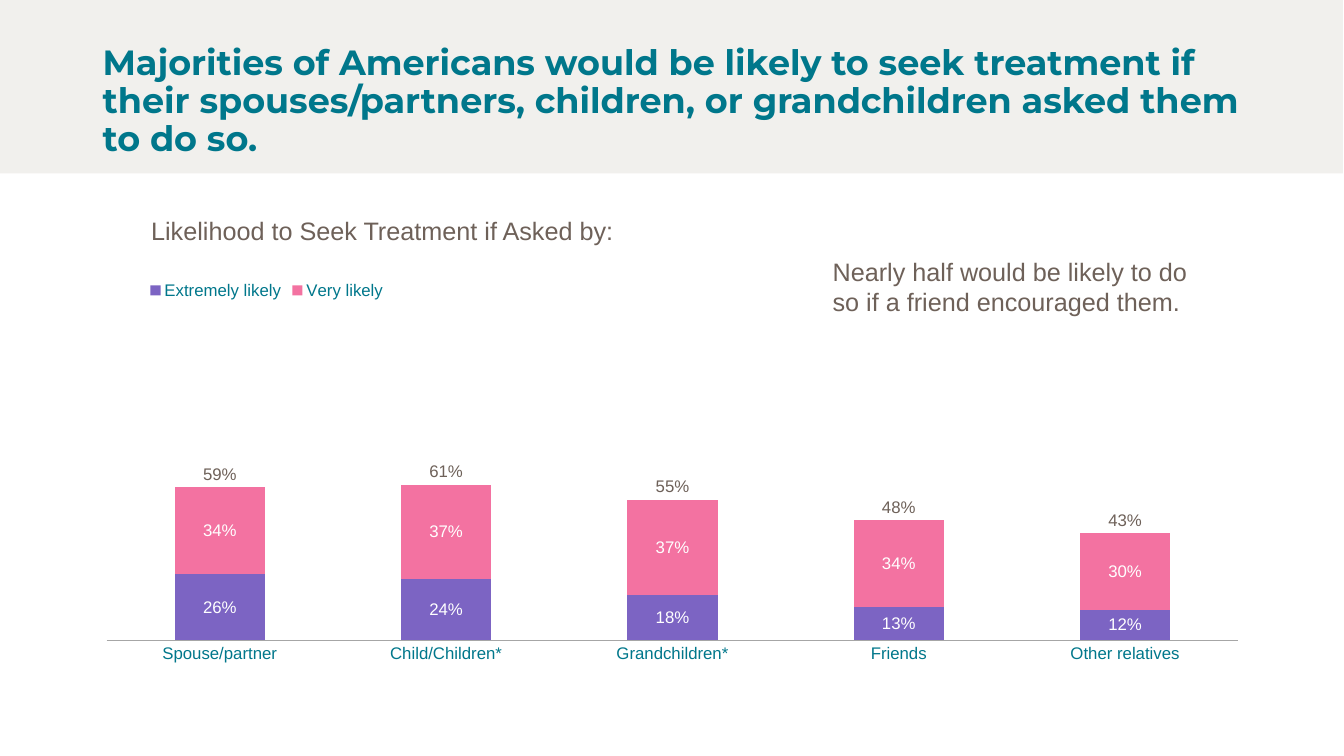
from dataclasses import dataclass

from lxml import etree
from pptx import Presentation
from pptx.chart.data import CategoryChartData
from pptx.dml.color import RGBColor
from pptx.enum.chart import XL_CHART_TYPE as ChartType
from pptx.enum.chart import XL_LABEL_POSITION as LabelPosition
from pptx.enum.chart import XL_LEGEND_POSITION as LegendPosition
from pptx.enum.chart import XL_TICK_MARK as TickMark
from pptx.enum.shapes import MSO_SHAPE as Shape
from pptx.oxml.ns import qn
from pptx.util import Inches, Pt


@dataclass(frozen=True)
class Theme:
    teal: str = "00778B"
    brown: str = "6E6159"
    band: str = "F1F0ED"
    purple: str = "7C64C3"
    pink: str = "F372A1"
    violet: str = "AE61C4"
    coral: str = "FF6352"
    turquoise: str = "00B7B4"
    white: str = "FFFFFF"
    axis: str = "A6A6A6"
    heading_font: str = "Montserrat"
    body_font: str = "Arial"
    title_size: int = 25
    note_size: int = 18
    chart_size: int = 12


THEME = Theme()
GROUPS = ["Spouse/partner", "Child/Children*", "Grandchildren*", "Friends", "Other relatives"]
UNUSED = [None] * len(GROUPS)
SHOWN_IN_LEGEND = 2
ANSWERS = [
    ("Extremely likely", [0.26, 0.24, 0.18, 0.13, 0.12], THEME.purple, THEME.white),
    ("Very likely", [0.34, 0.37, 0.37, 0.34, 0.3], THEME.pink, THEME.white),
    ("Series 3", [0.59, 0.61, 0.55, 0.48, 0.43], None, THEME.brown),
    ("Series 4", UNUSED, THEME.violet, THEME.white),
    ("Series 5", UNUSED, THEME.coral, THEME.white),
    ("Series 6", UNUSED, THEME.turquoise, THEME.white),
]


def rgb(value):
    return RGBColor.from_string(value)


def set_font(font, size, color, face=THEME.body_font, bold=False):
    font.name = face
    font.size = Pt(size)
    font.bold = bold
    font.color.rgb = rgb(color)


def add_text(slide, text, box, size=THEME.note_size, color=THEME.brown,
             face=THEME.body_font, bold=False, line_spacing=None):
    frame = slide.shapes.add_textbox(*map(Inches, box)).text_frame
    frame.word_wrap = True
    paragraph = frame.paragraphs[0]
    paragraph.line_spacing = line_spacing
    run = paragraph.add_run()
    run.text = text
    set_font(run.font, size, color, face, bold)


def add_band(slide, box):
    band = slide.shapes.add_shape(Shape.RECTANGLE, *map(Inches, box))
    band.shadow.inherit = False
    band.fill.solid()
    band.fill.fore_color.rgb = rgb(THEME.band)
    band.line.fill.background()


def place(parent, index, **settings):
    for old in parent.findall(qn("c:layout")):
        parent.remove(old)
    layout = etree.Element(qn("c:layout"))
    manual = etree.SubElement(layout, qn("c:manualLayout"))
    for tag, value in settings.items():
        etree.SubElement(manual, qn(f"c:{tag}")).set("val", str(value))
    parent.insert(index, layout)


def hide_legend_entry(legend_xml, series_index):
    entry = etree.Element(qn("c:legendEntry"))
    etree.SubElement(entry, qn("c:idx")).set("val", str(series_index))
    etree.SubElement(entry, qn("c:delete")).set("val", "1")
    legend_xml.insert(1, entry)


def style_series(series, fill, label_color):
    labels = series.data_labels
    labels.show_value = True
    labels.number_format = "0%"
    labels.number_format_is_linked = False
    set_font(labels.font, THEME.chart_size, label_color)
    if fill:
        series.format.fill.solid()
        series.format.fill.fore_color.rgb = rgb(fill)
        labels.position = LabelPosition.CENTER
    else:
        series.format.fill.background()
        labels.position = LabelPosition.INSIDE_BASE


def style_axes(chart):
    groups, shares = chart.category_axis, chart.value_axis
    groups.major_tick_mark = groups.minor_tick_mark = TickMark.NONE
    groups.has_major_gridlines = False
    groups.format.line.color.rgb = rgb(THEME.axis)
    shares.minimum_scale, shares.maximum_scale = 0, 1.4
    shares.has_major_gridlines = False
    shares.visible = False


def add_likelihood_chart(slide, box):
    data = CategoryChartData(number_format="0%")
    data.categories = GROUPS
    for name, shares, _, _ in ANSWERS:
        data.add_series(name, shares)
    chart = slide.shapes.add_chart(ChartType.COLUMN_STACKED, *map(Inches, box), data).chart
    chart.has_title = False
    set_font(chart.font, THEME.chart_size, THEME.teal)

    columns = chart.plots[0]
    columns.vary_by_categories = False
    columns.gap_width, columns.overlap = 150, 100
    for series, (_, _, fill, label_color) in zip(columns.series, ANSWERS):
        style_series(series, fill, label_color)
    style_axes(chart)

    chart.has_legend = True
    legend = chart.legend
    legend.position = LegendPosition.TOP
    legend.include_in_layout = False
    set_font(legend.font, THEME.chart_size, THEME.teal)
    legend_xml = chart.element.find(f".//{qn('c:legend')}")
    place(legend_xml, 1, xMode="edge", yMode="edge", x=0.045, y=0.158)
    for hidden in reversed(range(SHOWN_IN_LEGEND, len(ANSWERS))):
        hide_legend_entry(legend_xml, hidden)
    place(chart.element.find(f".//{qn('c:plotArea')}"), 0, layoutTarget="inner",
          xMode="edge", yMode="edge", x=0.012, y=0.17, w=0.976, h=0.745)


def main():
    deck = Presentation()
    deck.slide_width, deck.slide_height = Inches(13.33), Inches(7.5)
    slide = deck.slides.add_slide(deck.slide_layouts[6])
    add_band(slide, (-0.01, 0, 13.33, 1.72))
    add_text(slide, "Majorities of Americans would be likely to seek treatment if their "
             "spouses/partners, children, or grandchildren asked them to do so.",
             (0.92, 0.4, 11.5, 1.45), size=THEME.title_size, color=THEME.teal,
             face=THEME.heading_font, bold=True, line_spacing=0.9)
    add_likelihood_chart(slide, (0.92, 2, 11.5, 4.76))
    add_text(slide, "Likelihood to Seek Treatment if Asked by:", (1.4, 2.09, 5.69, 0.4))
    add_text(slide, "Nearly half would be likely to do so if a friend encouraged them.",
             (8.16, 2.49, 3.77, 0.71))
    deck.save("out.pptx")


if __name__ == "__main__":
    main()
